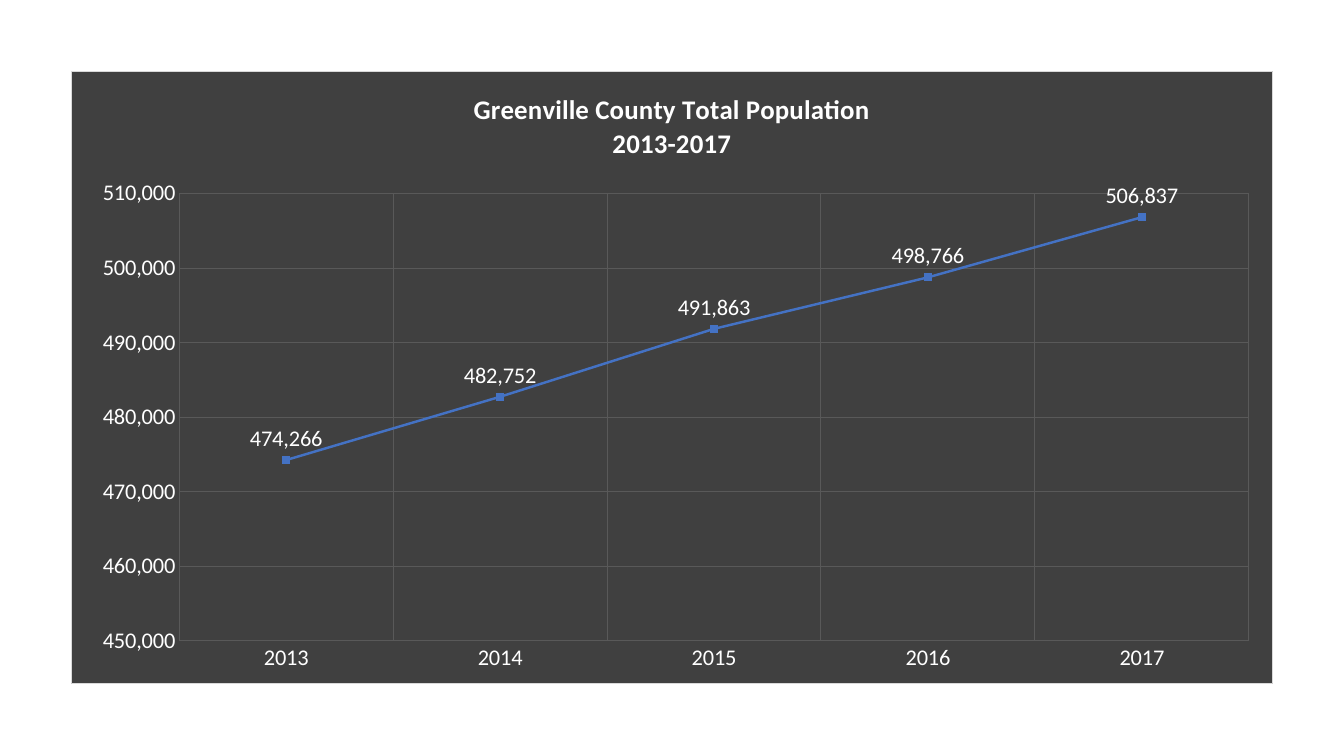
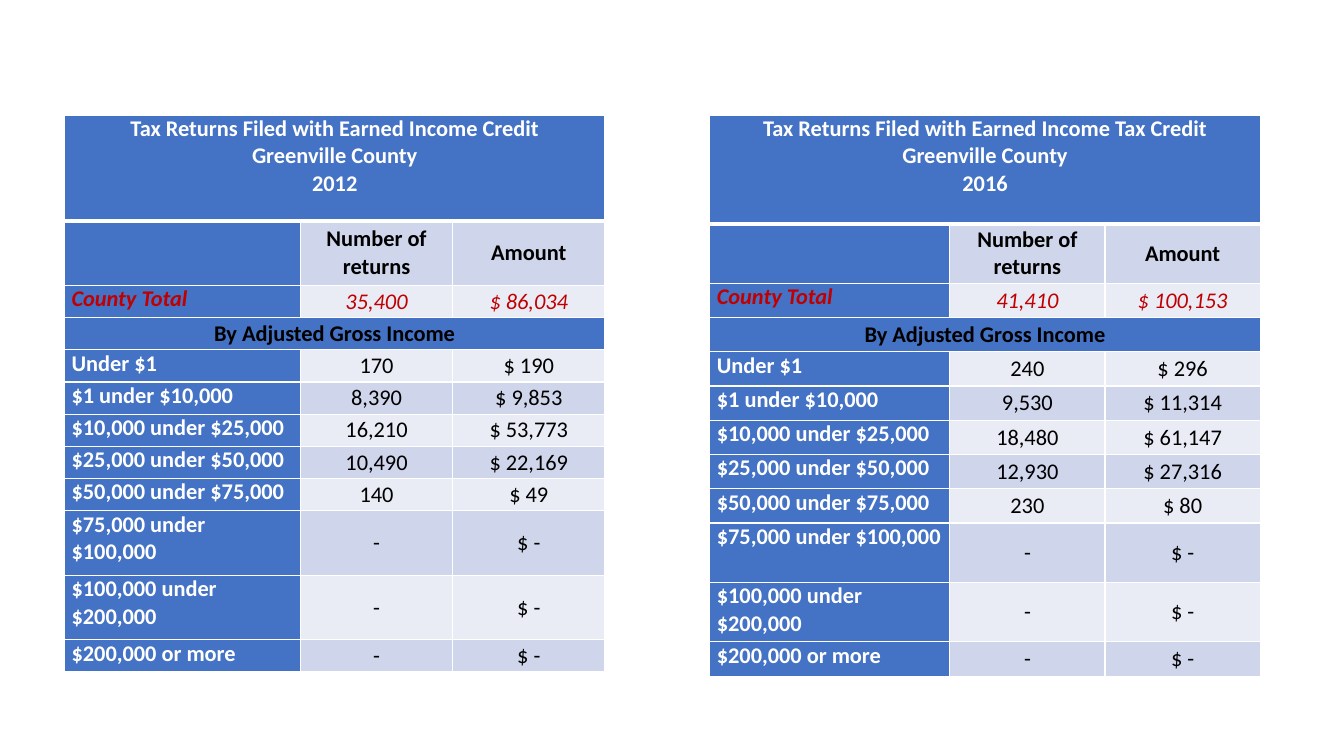
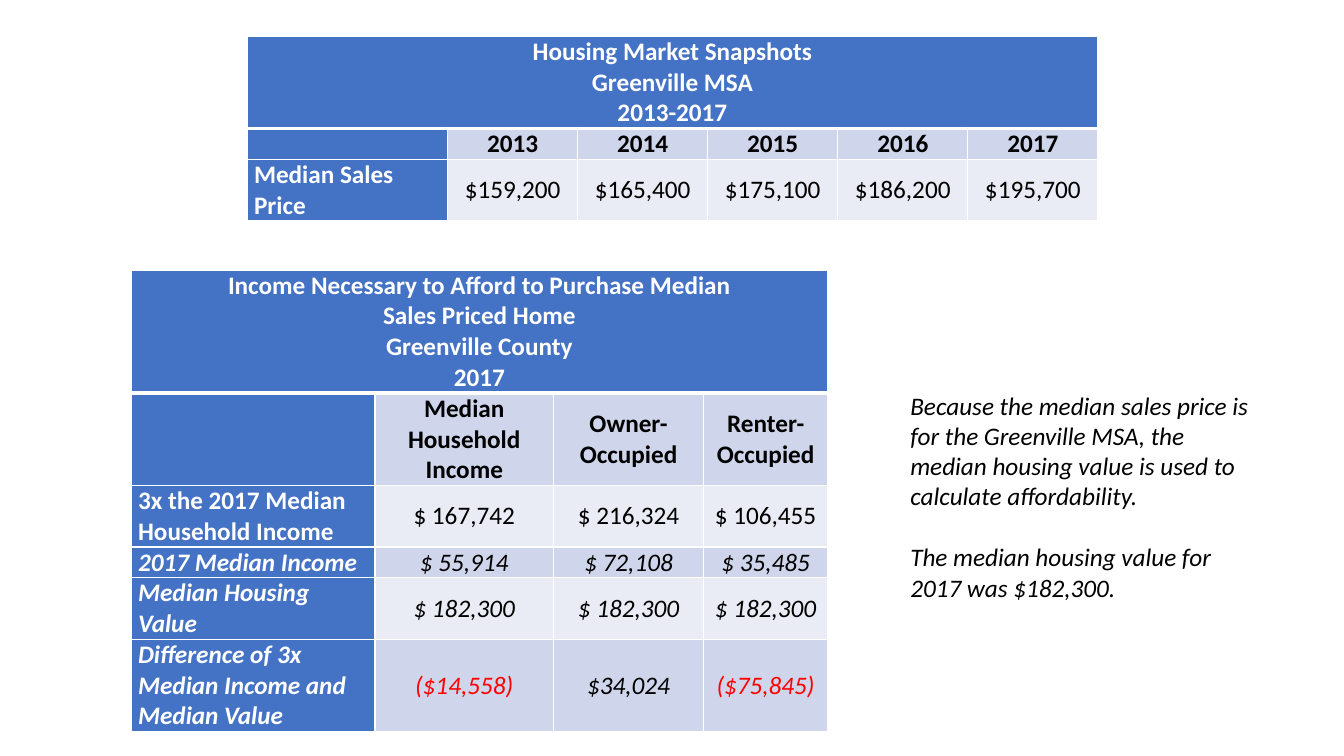
from lxml import etree
from pptx import Presentation
from pptx.chart.data import CategoryChartData
from pptx.dml.color import RGBColor
from pptx.enum.chart import XL_CHART_TYPE, XL_LABEL_POSITION, XL_TICK_MARK
from pptx.enum.text import MSO_ANCHOR, PP_ALIGN
from pptx.oxml import parse_xml
from pptx.oxml.ns import nsdecls, qn
from pptx.util import Pt

LINE = XL_CHART_TYPE.LINE
ABOVE = XL_LABEL_POSITION.ABOVE
NO_TICK = XL_TICK_MARK.NONE
TOP, MIDDLE = MSO_ANCHOR.TOP, MSO_ANCHOR.MIDDLE
LEFT, CENTER = PP_ALIGN.LEFT, PP_ALIGN.CENTER

# Shared look
FONT = "Calibri"
WHITE, BLACK = "FFFFFF", "000000"
BLUE, BAND_DARK, BAND_LIGHT = "4472C4", "CFD5EA", "E9EBF5"
TOTAL_RED, LOSS_RED = "C00000", "FF0000"
CHART_FILL, CHART_BORDER, GRID = "404040", "D9D9D9", "595959"

INCOME_BANDS = ["Under $1", "$1 under $10,000", "$10,000 under $25,000",
                "$25,000 under $50,000", "$50,000 under $75,000",
                "$75,000 under $100,000", "$100,000 under $200,000",
                "$200,000 or more"]


def px(length):
    """100 px to the inch."""
    return length * 9144


def rgb(color):
    return RGBColor.from_string(color)


def style_font(font, size, color, bold=False, italic=False):
    font.name, font.size = FONT, Pt(size)
    font.bold, font.italic = bold, italic
    font.color.rgb = rgb(color)


def write(frame, lines, size=16, color=BLACK, bold=False, italic=False,
          align=LEFT, gap=0):
    """Write one paragraph per line, with gap points between them."""
    for number, line in enumerate(lines):
        paragraph = frame.add_paragraph() if number else frame.paragraphs[0]
        paragraph.alignment = align
        if number and gap:
            paragraph.space_before = Pt(gap)
        run = paragraph.add_run()
        run.text = line
        style_font(run.font, size, color, bold, italic)


# Tables
def paint_cell(cell, fill, top=1, bottom=1):
    properties = cell._tc.get_or_add_tcPr()
    for side, width in (("L", 1), ("R", 1), ("T", top), ("B", bottom)):
        properties.append(parse_xml(
            f'<a:ln{side} {nsdecls("a")} w="{Pt(width)}"><a:solidFill>'
            f'<a:srgbClr val="{WHITE}"/></a:solidFill></a:ln{side}>'))
    cell.fill.solid()
    cell.fill.fore_color.rgb = rgb(fill)
    cell.margin_left = cell.margin_right = px(7)
    cell.margin_top = cell.margin_bottom = 0


def body_format(row, column, value, color, italic):
    """Format of a cell below the title row."""
    if column == 0:
        return dict(color=color or WHITE, bold=True, italic=italic)
    loss = LOSS_RED if value.startswith("(") else BLACK
    return dict(color=color or loss, bold=row == 1, italic=italic, align=CENTER)


def add_grid(slide, left, top, widths, heights, title, rows, size):
    """Rows are (cells, colour, italic); a row of one cell spans the table."""
    table = slide.shapes.add_table(
        len(heights), len(widths), px(left), px(top),
        px(sum(widths)), px(sum(heights))).table
    table.first_row = table.horz_banding = False
    for column, width in zip(table.columns, widths):
        column.width = px(width)
    for row, height in zip(table.rows, heights):
        row.height = px(height)

    last = len(widths) - 1
    for column in range(len(widths)):
        paint_cell(table.cell(0, column), BLUE, bottom=3)
    table.cell(0, 0).merge(table.cell(0, last))
    write(table.cell(0, 0).text_frame, title, size, WHITE, True, align=CENTER)

    for number, (values, color, italic) in enumerate(rows, 1):
        spanning = len(values) == 1
        band = BAND_DARK if number % 2 else BAND_LIGHT
        for column in range(len(widths)):
            cell = table.cell(number, column)
            paint_cell(cell, BLUE if spanning or column == 0 else band,
                       top=3 if number == 1 else 1)
            cell.vertical_anchor = MIDDLE if column else TOP
        if spanning:
            heading = table.cell(number, 0)
            heading.merge(table.cell(number, last))
            heading.vertical_anchor = MIDDLE
            write(heading.text_frame, values, size, bold=True, align=CENTER)
            continue
        for column, value in enumerate(values):
            if value:
                write(table.cell(number, column).text_frame, [value], size,
                      **body_format(number, column, value, color, italic))


def add_tax_table(slide, left, widths, heights, title, total, returns, amounts):
    rows = [(["", "Number of returns", "Amount"], None, False),
            (["County Total", *total], TOTAL_RED, True),
            (["By Adjusted Gross Income"], None, False)]
    rows += [([band, count, f"$ {amount}"], None, False)
             for band, count, amount in zip(INCOME_BANDS, returns, amounts)]
    add_grid(slide, left, 114, widths, heights, title, rows, 16)


# Chart
def frame_chart(chart):
    """Fill and border of the chart area, and place of the plot."""
    area = parse_xml(
        f'<c:spPr {nsdecls("c", "a")}><a:solidFill><a:srgbClr val="{CHART_FILL}"/>'
        f'</a:solidFill><a:ln w="{Pt(0.75)}"><a:solidFill>'
        f'<a:srgbClr val="{CHART_BORDER}"/></a:solidFill></a:ln></c:spPr>')
    chart._chartSpace.find(qn("c:chart")).addnext(area)

    plot_area = chart._chartSpace.find(".//" + qn("c:plotArea"))
    for old in plot_area.findall(qn("c:layout")):
        plot_area.remove(old)
    layout = etree.Element(qn("c:layout"))
    manual = etree.SubElement(layout, qn("c:manualLayout"))
    for tag, value in (("layoutTarget", "inner"), ("xMode", "edge"),
                       ("yMode", "edge"), ("x", "0.09"), ("y", "0.2"),
                       ("w", "0.89"), ("h", "0.73")):
        etree.SubElement(manual, qn("c:" + tag)).set("val", value)
    plot_area.insert(0, layout)


def style_axis(axis):
    axis.major_tick_mark = axis.minor_tick_mark = NO_TICK
    axis.format.line.fill.background()
    axis.has_major_gridlines = True
    axis.major_gridlines.format.line.color.rgb = rgb(GRID)
    axis.major_gridlines.format.line.width = Pt(0.75)
    style_font(axis.tick_labels.font, 16, WHITE)


def add_population_chart(slide):
    population = CategoryChartData(number_format="#,##0")
    population.categories = ["2013", "2014", "2015", "2016", "2017"]
    population.add_series("Series 1", [474266, 482752, 491863, 498766, 506837])
    chart = slide.shapes.add_chart(
        LINE, px(70), px(70), px(1193), px(609), population).chart
    style_font(chart.font, 16, WHITE)
    chart.has_legend = False
    chart.has_title = True
    write(chart.chart_title.text_frame,
          ["Greenville County Total Population", "2013-2017"],
          19.2, WHITE, True, align=CENTER)
    frame_chart(chart)

    style_axis(chart.category_axis)
    people = chart.value_axis
    style_axis(people)
    people.minimum_scale, people.maximum_scale = 450000, 510000
    people.major_unit = 10000
    people.tick_labels.number_format = "#,##0"
    people.tick_labels.number_format_is_linked = False

    plot = chart.plots[0]
    plot.vary_by_categories = False
    trend = plot.series[0]
    trend.smooth = False
    trend.format.line.color.rgb = rgb(BLUE)
    trend.format.line.width = Pt(1.75)
    trend.marker.style = None
    plot.has_data_labels = True
    labels = plot.data_labels
    labels.show_value = True
    labels.position = ABOVE
    labels.number_format = "#,##0"
    labels.number_format_is_linked = False
    style_font(labels.font, 16, WHITE)


# Slides
def tax_slide(slide):
    add_tax_table(
        slide, 704, [238, 154, 154], [108, 59] + [34] * 7 + [59, 59, 34],
        ["Tax Returns Filed with Earned Income Tax Credit",
         "Greenville County", "2016"],
        ["41,410", "$ 100,153"],
        ["240", "9,530", "18,480", "12,930", "230", "-", "-", "-"],
        ["296", "11,314", "61,147", "27,316", "80", "-", "-", "-"])
    add_tax_table(
        slide, 64, [234, 151, 151], [105, 64] + [32] * 7 + [64, 64, 32],
        ["Tax Returns Filed with Earned Income Credit",
         "Greenville County", "2012"],
        ["35,400", "$ 86,034"],
        ["170", "8,390", "16,210", "10,490", "140", "-", "-", "-"],
        ["190", "9,853", "53,773", "22,169", "49", "-", "-", "-"])


def housing_slide(slide):
    add_grid(
        slide, 245, 36, [199] + [129] * 5, [90, 30, 60],
        ["Housing Market Snapshots", "Greenville MSA", "2013-2017"],
        [(["", "2013", "2014", "2015", "2016", "2017"], None, False),
         (["Median Sales Price", "$159,200", "$165,400", "$175,100",
           "$186,200", "$195,700"], None, False)], 18)
    add_grid(
        slide, 130, 268, [242, 177, 149, 123], [120, 90, 60, 30, 60, 90],
        ["Income Necessary to Afford to Purchase Median", "Sales Priced Home",
         "Greenville County", "2017"],
        [(["", "Median Household Income", "Owner-Occupied",
           "Renter-Occupied"], None, False),
         (["3x the 2017 Median Household Income", "$ 167,742", "$ 216,324",
           "$ 106,455"], None, False),
         (["2017 Median Income", "$ 55,914", "$ 72,108", "$ 35,485"],
          None, True),
         (["Median Housing Value"] + ["$ 182,300"] * 3, None, True),
         (["Difference of 3x Median Income and Median Value", "($14,558)",
           "$34,024", "($75,845)"], None, True)], 18)
    note = slide.shapes.add_textbox(px(893), px(382), px(361), px(222)).text_frame
    note.word_wrap = True
    write(note,
          ["Because the median sales price is for the Greenville MSA, the "
           "median housing value is used to calculate affordability.",
           "The median housing value for 2017 was $182,300."],
          18, italic=True, gap=22)


def main():
    deck = Presentation()
    deck.slide_width, deck.slide_height = px(1333), px(750)
    for build in (add_population_chart, tax_slide, housing_slide):
        build(deck.slides.add_slide(deck.slide_layouts[6]))
    deck.save("out.pptx")


if __name__ == "__main__":
    main()
